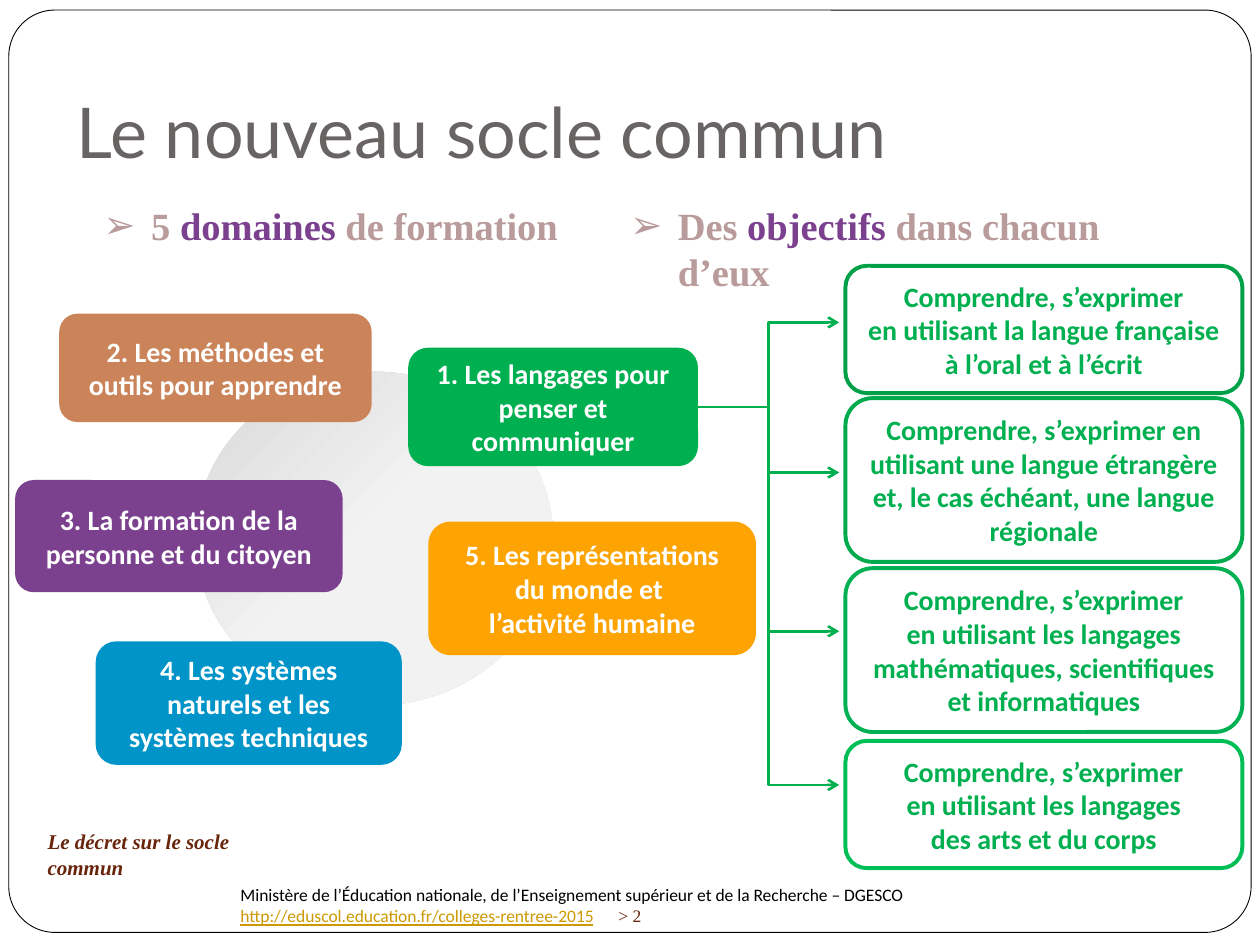
import copy
from dataclasses import dataclass

import lxml.etree
import pptx
import pptx.dml.color
import pptx.enum.shapes
import pptx.enum.text
import pptx.oxml
import pptx.oxml.ns
import pptx.util

Inches, Pt = pptx.util.Inches, pptx.util.Pt
Align, Anchor = pptx.enum.text.PP_ALIGN, pptx.enum.text.MSO_ANCHOR
Preset = pptx.enum.shapes.MSO_SHAPE
qn = pptx.oxml.ns.qn
Box = tuple[float, float, float, float]


@dataclass(frozen=True)
class Theme:
    heading: str = "Lato"
    label: str = "Calibri"
    serif: str = "Times New Roman"
    title_size: int = 40
    list_size: int = 22
    box_size: int = 16
    caption_size: int = 12
    footer_size: int = 10
    grey: str = "696464"
    rose: str = "B99B9B"
    purple: str = "7B418E"
    green: str = "00B050"
    brown: str = "69240C"
    link: str = "CC9900"
    white: str = "FFFFFF"
    black: str = "000000"


@dataclass(frozen=True)
class Domain:
    text: str
    box: Box
    color: str


@dataclass(frozen=True)
class Objective:
    text: str
    top: float
    height: float
    outline: str
    arrow_y: float


THEME = Theme()
DOMAINS = [
    Domain("4. Les systèmes naturels et les systèmes techniques",
           (0.76, 5.09, 2.43, 0.98), "0094C8"),
    Domain("3. La formation de la personne et du citoyen",
           (0.12, 3.81, 2.6, 0.89), THEME.purple),
    Domain("2. Les méthodes et outils pour apprendre",
           (0.47, 2.49, 2.48, 0.86), "CB8459"),
    Domain("5. Les représentations du monde et \nl’activité humaine",
           (3.4, 4.14, 2.6, 1.06), "FDA403"),
    Domain("1. Les langages pour penser et communiquer",
           (3.24, 2.76, 2.3, 0.94), THEME.green),
]
OBJECTIVES = [
    Objective("Comprendre, s’exprimer\nen utilisant la langue française à l’oral et à l’écrit",
              2.11, 1.01, "00A048", 2.56),
    Objective("Comprendre, s’exprimer en utilisant une langue étrangère et, "
              "le cas échéant, une langue régionale", 3.16, 1.3, "00AA4D", 3.75),
    Objective("Comprendre, s’exprimer\nen utilisant les langages mathématiques, "
              "scientifiques et informatiques", 4.51, 1.3, "00B052", 5.01),
    Objective("Comprendre, s’exprimer\nen utilisant les langages\ndes arts et du corps",
              5.88, 1.01, "00BE56", 6.23),
]
ARROW_START, ARROW_END = (5.54, 3.23), 6.66
GRADIENT = """<a:gradFill xmlns:a="http://schemas.openxmlformats.org/drawingml/2006/main">
<a:gsLst><a:gs pos="0"><a:srgbClr val="F2F2F2"/></a:gs>
<a:gs pos="50000"><a:srgbClr val="F2F2F2"/></a:gs>
<a:gs pos="100000"><a:srgbClr val="D9D9D9"/></a:gs></a:gsLst>
<a:path path="circle"><a:fillToRect l="100000" t="100000"/></a:path></a:gradFill>"""


def rgb(color: str) -> pptx.dml.color.RGBColor:
    return pptx.dml.color.RGBColor.from_string(color)


def write(paragraph, text: str, *, font: str, size: float, color: str, bold=False,
          italic=False, underline=False, align=Align.LEFT) -> None:
    """Append formatted text to a paragraph; a newline becomes a line break."""
    paragraph.alignment = align
    for number, line in enumerate(text.split("\n")):
        if number:
            paragraph.add_line_break()
            # The break keeps the size of the text before it
            paragraph._p[-1].append(copy.deepcopy(run._r.rPr))
        run = paragraph.add_run()
        run.text = line
        run.font.name, run.font.size = font, Pt(size)
        run.font.bold, run.font.italic, run.font.underline = bold, italic, underline
        run.font.color.rgb = rgb(color)


def place(shape, box: Box) -> None:
    shape.left, shape.top, shape.width, shape.height = map(Inches, box)


def add_panel(slide, preset, box: Box, fill: str | None = None,
              outline: str | None = None, width: float = 2.25):
    panel = slide.shapes.add_shape(preset, *map(Inches, box))
    panel.shadow.inherit = False
    if fill:
        panel.fill.solid()
        panel.fill.fore_color.rgb = rgb(fill)
    else:
        panel.fill.background()
    if outline:
        panel.line.color.rgb = rgb(outline)
        panel.line.width = Pt(width)
    else:
        panel.line.fill.background()
    return panel


def add_label(panel, text: str, color: str) -> None:
    frame = panel.text_frame
    frame.word_wrap = True
    frame.vertical_anchor = Anchor.MIDDLE
    write(frame.paragraphs[0], text, font=THEME.label, size=THEME.box_size,
          color=color, bold=True, align=Align.CENTER)


def add_arrow(slide, end_y: float) -> None:
    arrow = slide.shapes.add_connector(
        pptx.enum.shapes.MSO_CONNECTOR.ELBOW,
        *map(Inches, (*ARROW_START, ARROW_END, end_y)))
    arrow.line.color.rgb = rgb(THEME.green)
    arrow.line.width = Pt(1.5)
    lxml.etree.SubElement(arrow.line._get_or_add_ln(), qn("a:tailEnd"), type="arrow")
    lxml.etree.SubElement(arrow._element.spPr, qn("a:effectLst"))


def fill_list(placeholder, box: Box, parts: list[tuple[str, str]]) -> None:
    place(placeholder, box)
    frame = placeholder.text_frame
    frame.auto_size = pptx.enum.text.MSO_AUTO_SIZE.NONE
    item = frame.paragraphs[0]
    item.space_before = Pt(0)
    for text, color in parts:
        write(item, text, font=THEME.serif, size=THEME.list_size, color=color, bold=True)
    properties = item._p.get_or_add_pPr()
    properties.set("marL", str(Inches(0.38)))
    properties.set("indent", str(-Inches(0.38)))
    lxml.etree.SubElement(properties, qn("a:buChar"), char="➢")


def add_text_frame(slide, box: Box):
    frame = slide.shapes.add_textbox(*map(Inches, box)).text_frame
    frame.word_wrap = True
    return frame


def main() -> None:
    deck = pptx.Presentation()
    deck.slide_width, deck.slide_height = Inches(10), Inches(7.5)
    slide = deck.slides.add_slide(deck.slide_layouts.get_by_name("Two Content"))

    # Page frame and central disc
    frame = add_panel(slide, Preset.ROUNDED_RECTANGLE, (0.07, 0.08, 9.86, 7.32),
                      outline=THEME.black, width=0.5)
    frame.adjustments[0] = 0.05
    disc = add_panel(slide, Preset.OVAL, (1.55, 2.95, 2.84, 2.65))
    no_fill = disc._element.spPr.find(qn("a:noFill"))
    disc._element.spPr.replace(no_fill, pptx.oxml.parse_xml(GRADIENT))

    # Title and the two list headings
    title = slide.shapes.title
    place(title, (0.51, 0.13, 8.99, 1.34))
    title.text_frame.vertical_anchor = Anchor.BOTTOM
    title.text_frame.margin_bottom = Inches(0.1)
    write(title.text_frame.paragraphs[0], "Le nouveau socle commun",
          font=THEME.heading, size=THEME.title_size, color=THEME.grey)
    fill_list(slide.placeholders[1], (0.72, 1.55, 4.04, 0.47),
              [("5 ", THEME.rose), ("domaines", THEME.purple), (" de formation", THEME.rose)])
    fill_list(slide.placeholders[2], (4.9, 1.55, 4.67, 0.84),
              [("Des ", THEME.rose), ("objectifs ", THEME.purple),
               ("dans chacun d’eux", THEME.rose)])

    # Domains, then the objectives of the first one
    for domain in DOMAINS:
        panel = add_panel(slide, Preset.ROUNDED_RECTANGLE, domain.box, fill=domain.color)
        add_label(panel, domain.text, THEME.white)
    for objective in OBJECTIVES:
        panel = add_panel(slide, Preset.ROUNDED_RECTANGLE,
                          (6.71, objective.top, 3.15, objective.height),
                          outline=objective.outline)
        add_label(panel, objective.text, THEME.green)
        add_arrow(slide, objective.arrow_y)

    # Caption and footer
    caption = add_text_frame(slide, (0.28, 6.53, 2.12, 0.3))
    write(caption.paragraphs[0], "Le décret sur le socle commun", font=THEME.serif,
          size=THEME.caption_size, color=THEME.brown, bold=True, italic=True)
    footer = add_text_frame(slide, (1.81, 6.97, 7.76, 0.53))
    write(footer.paragraphs[0],
          "Ministère de l’Éducation nationale, de l’Enseignement supérieur "
          "et de la Recherche – DGESCO",
          font=THEME.label, size=THEME.footer_size, color=THEME.black)
    address = footer.add_paragraph()
    write(address, "http://eduscol.education.fr/colleges-rentree-2015", font=THEME.label,
          size=THEME.footer_size, color=THEME.link, underline=True)
    write(address, "\t> 2", font=THEME.serif, size=THEME.footer_size, color=THEME.brown)

    deck.save("out.pptx")


if __name__ == "__main__":
    main()
